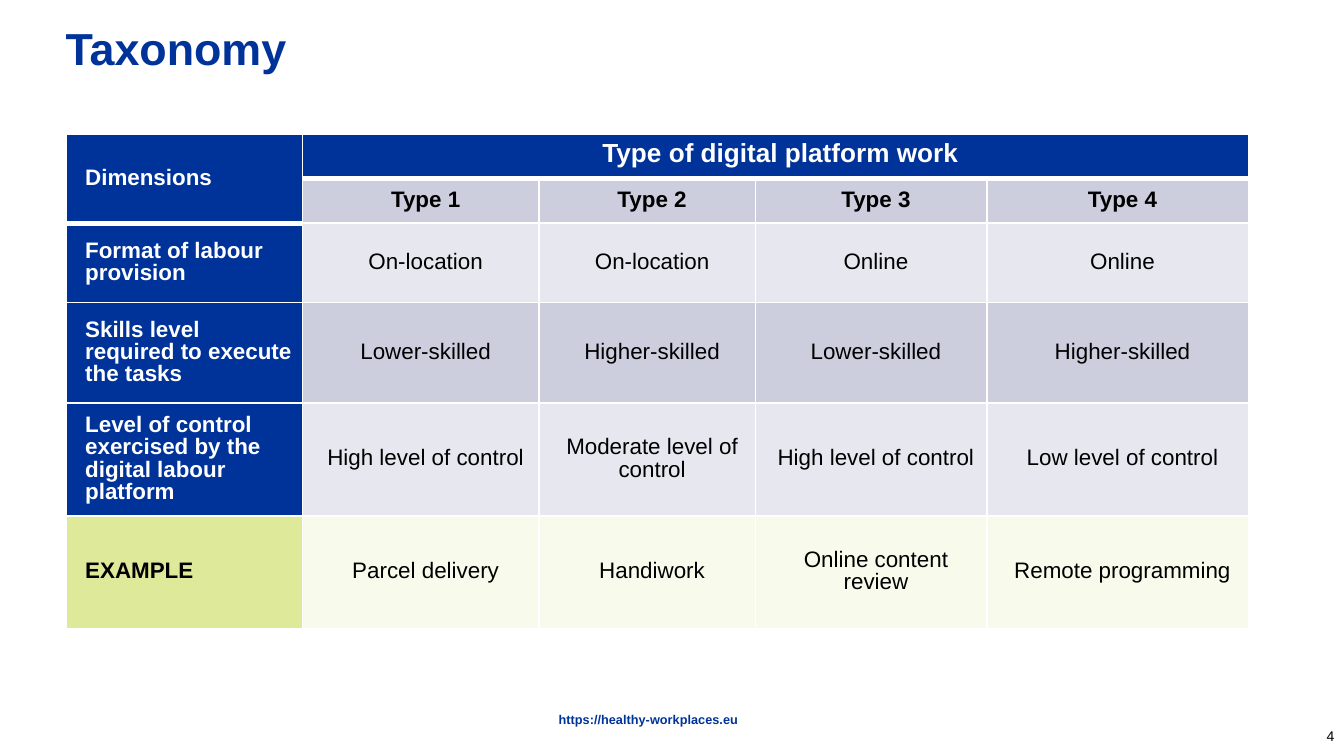
from pptx import Presentation
from pptx.dml.color import RGBColor as Rgb
from pptx.enum.text import MSO_ANCHOR as Anchor, PP_ALIGN as Align
from pptx.oxml.ns import qn
from pptx.util import Cm, Pt
from lxml.etree import SubElement as Sub

HUES = {"blue": "003399", "white": "FFFFFF", "black": "000000",
        "dark": "CCCEDE", "pale": "E7E8EF",
        "lime": "DEE999", "cream": "F8FBEB"}
WIDTHS = [4.47, 4.47, 4.09, 4.37, 4.95]
HEIGHTS = [0.84, 0.84, 1.5, 1.9, 2.13, 2.13]
ROWS = [
    ["Dimensions", "Type of digital platform work", "", "", ""],
    ["", "Type 1", "Type 2", "Type 3", "Type 4"],
    ["Format of labour provision",
     "On-location", "On-location", "Online", "Online"],
    ["Skills level required to execute the tasks",
     "Lower-skilled", "Higher-skilled", "Lower-skilled", "Higher-skilled"],
    ["Level of control exercised by the digital labour platform",
     "High level of control", "Moderate level of control",
     "High level of control", "Low level of control"],
    ["EXAMPLE", "Parcel delivery", "Handiwork",
     "Online content review", "Remote programming"],
]
# Fill of the first column and of the others, row by row
FILLS = [("blue", "blue"), ("blue", "dark"), ("blue", "pale"),
         ("blue", "dark"), ("blue", "pale"), ("lime", "cream")]


class Deck:
    font = "Arial"

    def __init__(self, wide, high):
        self.prs = Presentation()
        self.prs.slide_width, self.prs.slide_height = Cm(wide), Cm(high)
        self.slide = self.prs.slides.add_slide(self.prs.slide_layouts[5])

    def text(self, frame, words, size, hue, bold=False, align=Align.LEFT):
        para = frame.paragraphs[0]
        para.alignment = align
        run = para.add_run()
        run.text = words
        run.font.name, run.font.size, run.font.bold = self.font, Pt(size), bold
        run.font.color.rgb = Rgb.from_string(HUES[hue])
        return para

    def pad(self, frame, left, top, right, low):
        frame.margin_left, frame.margin_top = Cm(left), Cm(top)
        frame.margin_right, frame.margin_bottom = Cm(right), Cm(low)

    def title(self, words, box):
        shape = self.slide.shapes.title
        shape.left, shape.top, shape.width, shape.height = map(Cm, box)
        frame = shape.text_frame
        frame.vertical_anchor = Anchor.MIDDLE
        self.pad(frame, 0, 0.13, 0.25, 0.13)
        self.text(frame, words, 24, "blue", True)

    def label(self, words, box, pads, anchor, size, hue, bold, align):
        frame = self.slide.shapes.add_textbox(*map(Cm, box)).text_frame
        frame.word_wrap = True
        frame.vertical_anchor = anchor
        self.pad(frame, *pads)
        return self.text(frame, words, size, hue, bold, align)

    def edge(self, cell, side, width):
        line = Sub(cell._tc.get_or_add_tcPr(), qn("a:ln" + side), w=str(Pt(width)))
        Sub(Sub(line, qn("a:solidFill")), qn("a:srgbClr"), val=HUES["white"])

    def cell(self, cell, row, col):
        # The heading ends one row lower in the first column
        head = 0 if col else 1
        self.edge(cell, "L", 1)
        self.edge(cell, "R", 1)
        self.edge(cell, "T", 3 if row == head + 1 else 1)
        self.edge(cell, "B", 3 if row <= head else 1)
        fill = FILLS[row][col > 0]
        cell.fill.solid()
        cell.fill.fore_color.rgb = Rgb.from_string(HUES[fill])
        cell.vertical_anchor = Anchor.MIDDLE
        self.pad(cell, 0.18, 0, 0.18, 0)
        if not ROWS[row][col]:
            return
        align = Align.CENTER if col else Align.LEFT if row else Align.JUSTIFY
        para = self.text(cell.text_frame, ROWS[row][col],
                         14 if col and not row else 12,
                         "white" if fill == "blue" else "black",
                         not col or row < 2, align)
        para.line_spacing = Pt(12)
        para._p.get_or_add_pPr().set("marL", str(Cm(0.18)))

    def table(self, left, top):
        grid = self.slide.shapes.add_table(
            len(ROWS), len(WIDTHS), Cm(left), Cm(top),
            Cm(sum(WIDTHS)), Cm(sum(HEIGHTS))).table
        for col, wide in zip(grid.columns, WIDTHS):
            col.width = Cm(wide)
        for row, high in zip(grid.rows, HEIGHTS):
            row.height = Cm(high)
        grid.cell(0, 0).merge(grid.cell(1, 0))
        grid.cell(0, 1).merge(grid.cell(0, 4))
        for row in range(len(ROWS)):
            for col in range(len(WIDTHS)):
                self.cell(grid.cell(row, col), row, col)


def main():
    deck = Deck(25.4, 14.29)
    # Footer and page number
    deck.label("4", (23.7, 13.54, 1.7, 0.76), (0.18, 0.1, 0.18, 0.1),
               Anchor.MIDDLE, 7.5, "black", False, Align.RIGHT)
    foot = deck.label("https://healthy-workplaces.eu", (3.86, 13.49, 16.79, 0.23),
                      (0, 0, 0, 0), Anchor.TOP, 6.8, "blue", True, Align.CENTER)
    foot.line_spacing = 0.9
    # Title and taxonomy table
    deck.title("Taxonomy", (1.24, 0.38, 21, 1.02))
    deck.table(1.25, 2.54)
    deck.prs.save("out.pptx")


if __name__ == "__main__":
    main()
